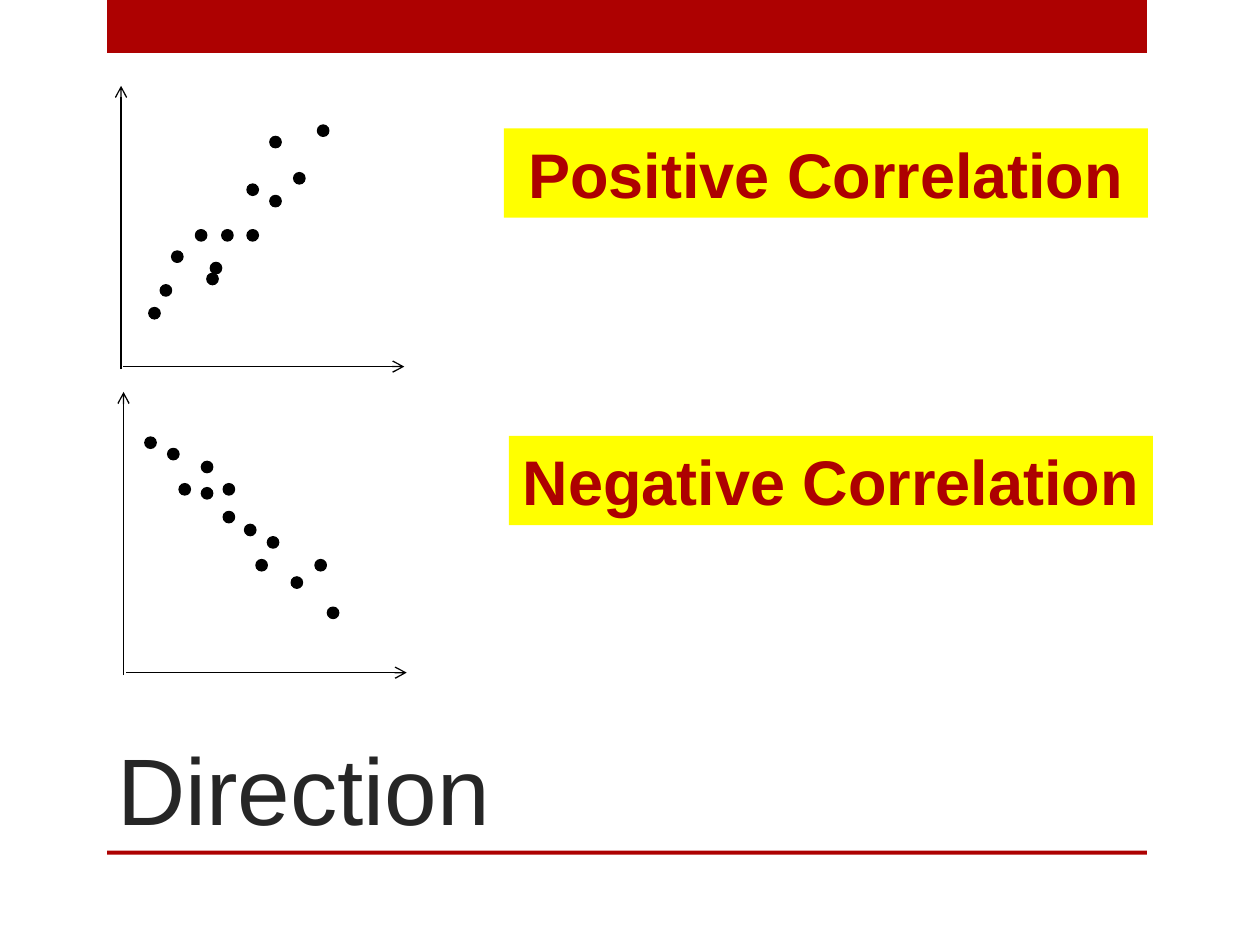
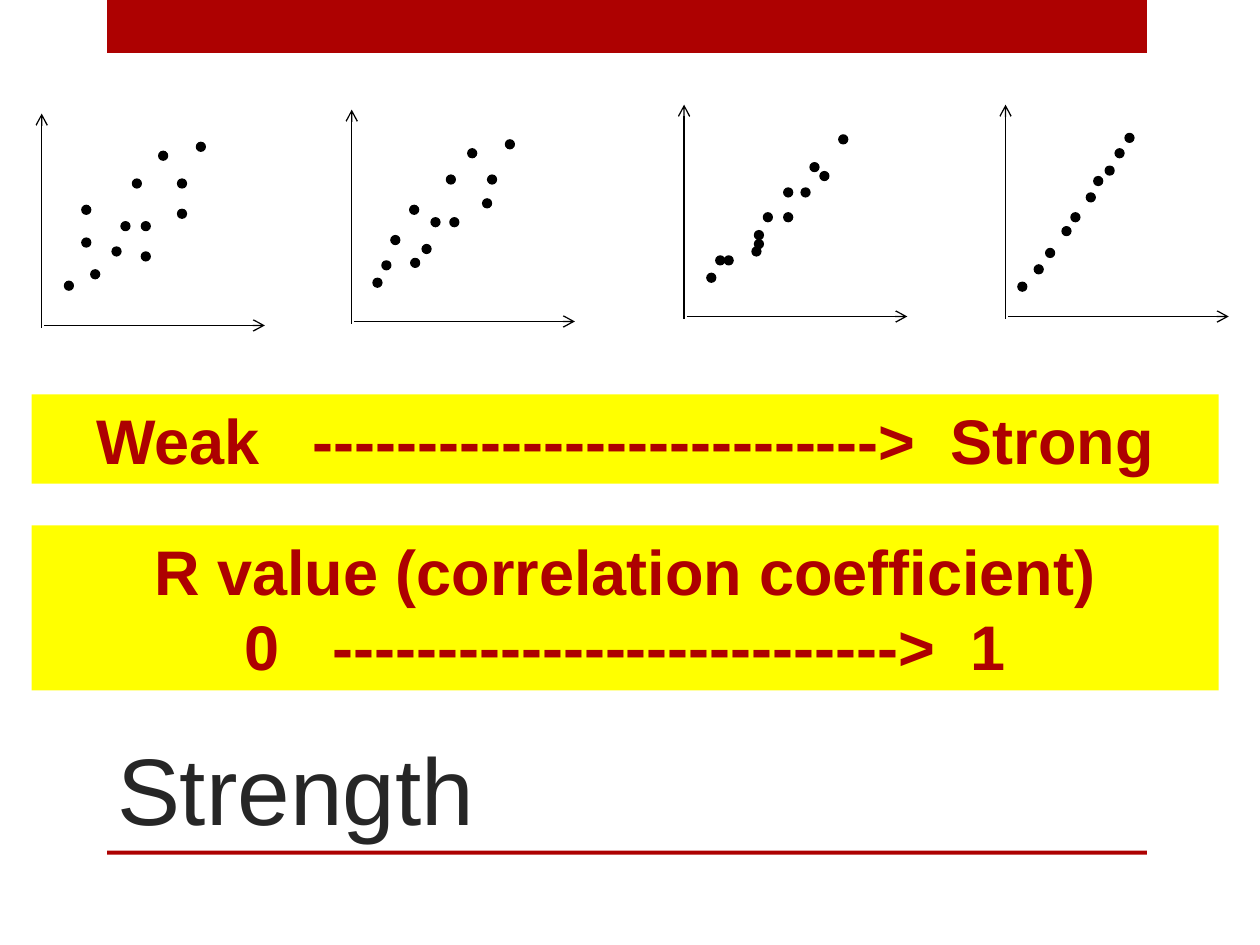
"""Builds two slides on the direction and strength of a correlation."""
from dataclasses import dataclass
from typing import NamedTuple

from lxml import etree
from pptx import Presentation
from pptx import util as u
from pptx.dml.color import RGBColor
from pptx.enum import shapes, text
from pptx.oxml import ns


@dataclass(frozen=True)
class Theme:
    red: RGBColor = RGBColor(0xAD, 0x01, 0x01)
    yellow: RGBColor = RGBColor(0xFF, 0xFF, 0x00)
    black: RGBColor = RGBColor(0, 0, 0)
    title_grey: RGBColor = RGBColor(0x26, 0x26, 0x26)
    font: str = "Arial"
    title_size: int = 54
    banner_size: int = 36
    line_width: float = 0.75


class Box(NamedTuple):
    left: float
    top: float
    width: float
    height: float


class Piece(NamedTuple):
    words: str
    spacing: int = 0


class Banner(NamedTuple):
    box: Box
    lines: list[list[Piece]]


class PlotSize(NamedTuple):
    height: float
    reach: float
    dot: float


class Scatter(NamedTuple):
    left: float
    top: float
    size: PlotSize
    dots: list[tuple[float, float]]


class Topic(NamedTuple):
    title: str
    scatters: list[Scatter]
    banners: list[Banner]


THEME = Theme()
AXIS_GAP = 0.05
TOP_BAND = Box(2.16, 0, 20.96, 1.07)
TITLE_RULE = Box(2.16, 17.15, 20.96, 0.08)
TITLE_BOX = Box(2.11, 12.7, 18.85, 4.45)
LARGE = PlotSize(5.71, 5.71, 0.23)
SMALL = PlotSize(4.32, 4.5, 0.18)
ARROW = Piece("-" * 27 + ">")
GAP_BEFORE_ARROW = Piece(" ", 20)
GAP_AFTER_ARROW = Piece(" ", 10)


def scale(low: str, high: str) -> list[Piece]:
    """Return a line that leads from a low label to a high one."""
    return [Piece(low), GAP_BEFORE_ARROW, ARROW, GAP_AFTER_ARROW, Piece(high)]


TOPICS = [
    Topic(
        "Direction",
        [
            Scatter(2.44, 1.73, LARGE, [
                (0.56, 4.47), (1.73, 3.78), (0.79, 4.01), (3, 1.02), (2.03, 2.9),
                (1.5, 2.9), (1.8, 3.56), (2.54, 1.98), (3.48, 1.75), (3, 2.21),
                (1.02, 3.33), (3.96, 0.79), (2.54, 2.9)]),
            Scatter(2.49, 7.9, LARGE, [
                (0.43, 0.91), (1.12, 1.85), (0.89, 1.14), (3.86, 3.38), (2.01, 2.41),
                (2.01, 1.85), (1.57, 1.93), (2.9, 2.92), (3.38, 3.73), (2.67, 3.38),
                (1.57, 1.4), (4.11, 4.34), (2.44, 2.67)]),
        ],
        [
            Banner(Box(10.16, 2.59, 12.98, 1.8), [[Piece("Positive Correlation")]]),
            Banner(Box(10.26, 8.79, 12.98, 1.8), [[Piece("Negative Correlation")]]),
        ],
    ),
    Topic(
        "Strength",
        [
            Scatter(0.84, 2.29, SMALL, [
                (0.46, 3.38), (2.01, 2.79), (0.99, 3.15), (2.36, 0.76), (1.6, 2.18),
                (0.81, 1.85), (1.42, 2.69), (1.83, 1.32), (2.74, 1.32), (2.74, 1.93),
                (0.81, 2.51), (3.12, 0.58), (2.01, 2.18)]),
            Scatter(7.09, 2.21, SMALL, [
                (0.43, 3.4), (1.19, 3), (0.61, 3.05), (2.34, 0.79), (1.6, 2.18),
                (1.17, 1.93), (1.42, 2.72), (1.91, 1.32), (2.74, 1.32), (2.64, 1.8),
                (0.79, 2.54), (3.1, 0.61), (1.98, 2.18)]),
            Scatter(13.79, 2.11, SMALL, [
                (0.46, 3.4), (1.37, 2.87), (0.64, 3.05), (2.54, 1.17), (1.6, 2.18),
                (1.42, 2.54), (1.42, 2.72), (2.01, 1.68), (2.74, 1.35), (2.36, 1.68),
                (0.81, 3.05), (3.12, 0.61), (2.01, 2.18)]),
            Scatter(20.27, 2.11, SMALL, [
                (0.25, 3.58), (0.81, 2.9), (0.58, 3.23), (2.21, 0.89), (1.32, 2.18),
                (1.14, 2.46), (1.78, 1.45), (1.63, 1.78), (2.41, 0.58), (2.01, 1.24)]),
        ],
        [
            Banner(Box(0.64, 7.95, 23.93, 1.8), [scale("Weak", "Strong")]),
            Banner(Box(0.64, 10.59, 23.93, 3.33), [
                [Piece("R value (correlation coefficient)")], scale("0", "1")]),
        ],
    ),
]


def in_cm(*lengths: float) -> list[u.Cm]:
    """Turn plain numbers into centimetre lengths."""
    return [u.Cm(length) for length in lengths]


def add_filled(slide, kind, box: Box, color: RGBColor):
    """Draw a flat shape without an outline."""
    filled = slide.shapes.add_shape(kind, *in_cm(*box))
    filled.shadow.inherit = False
    filled.fill.solid()
    filled.fill.fore_color.rgb = color
    filled.line.fill.background()
    return filled


def style_run(run, size: int, color: RGBColor, bold: bool = False) -> None:
    """Give a run the theme font, a size and a colour."""
    run.font.name = THEME.font
    run.font.size = u.Pt(size)
    run.font.color.rgb = color
    run.font.bold = bold


def add_title(slide, title: str) -> None:
    """Write the slide title on its bottom rule."""
    heading = slide.shapes.add_textbox(*in_cm(*TITLE_BOX)).text_frame
    heading.word_wrap = True
    heading.vertical_anchor = text.MSO_ANCHOR.BOTTOM
    heading.text = title
    style_run(heading.paragraphs[0].runs[0], THEME.title_size, THEME.title_grey)


def add_axis(slide, start: tuple[float, float], end: tuple[float, float]) -> None:
    """Draw an axis with an arrowhead at its end."""
    axis = slide.shapes.add_connector(
        shapes.MSO_CONNECTOR.STRAIGHT, *in_cm(*start, *end))
    axis.line.color.rgb = THEME.black
    axis.line.width = u.Pt(THEME.line_width)
    etree.SubElement(axis.line._get_or_add_ln(), ns.qn("a:tailEnd"), type="arrow")
    etree.SubElement(axis._element.spPr, ns.qn("a:effectLst"))


def add_scatter(slide, scatter: Scatter) -> None:
    """Draw two axes and the dots between them."""
    left, top, size, dots = scatter
    bottom = top + size.height
    base = bottom - AXIS_GAP
    add_axis(slide, (left, bottom), (left, top))
    add_axis(slide, (left + AXIS_GAP, base), (left + size.reach, base))
    for across, down in dots:
        dot_box = Box(left + across, top + down, size.dot, size.dot)
        dot = add_filled(slide, shapes.MSO_SHAPE.OVAL, dot_box, THEME.black)
        dot.line.color.rgb = THEME.black
        dot.line.width = u.Pt(THEME.line_width)


def add_banner(slide, banner: Banner) -> None:
    """Draw a highlighted block of centred bold lines."""
    block = add_filled(slide, shapes.MSO_SHAPE.RECTANGLE, banner.box, THEME.yellow)
    frame = block.text_frame
    frame.word_wrap = True
    frame.margin_left = frame.margin_right = u.Cm(0.2)
    for index, pieces in enumerate(banner.lines):
        line = frame.add_paragraph() if index else frame.paragraphs[0]
        line.alignment = text.PP_ALIGN.CENTER
        for piece in pieces:
            run = line.add_run()
            run.text = piece.words
            style_run(run, THEME.banner_size, THEME.red, bold=True)
            if piece.spacing:
                run.font._element.set("spc", str(piece.spacing * 100))


def add_topic(deck, topic: Topic) -> None:
    """Add one slide with its bands, title, plots and banners."""
    slide = deck.slides.add_slide(deck.slide_layouts[6])
    for band in (TOP_BAND, TITLE_RULE):
        add_filled(slide, shapes.MSO_SHAPE.RECTANGLE, band, THEME.red)
    add_title(slide, topic.title)
    for scatter in topic.scatters:
        add_scatter(slide, scatter)
    for banner in topic.banners:
        add_banner(slide, banner)


def main() -> None:
    """Build the deck and save it."""
    deck = Presentation()
    deck.slide_width, deck.slide_height = in_cm(25.4, 19.05)
    for topic in TOPICS:
        add_topic(deck, topic)
    deck.save("out.pptx")


if __name__ == "__main__":
    main()
